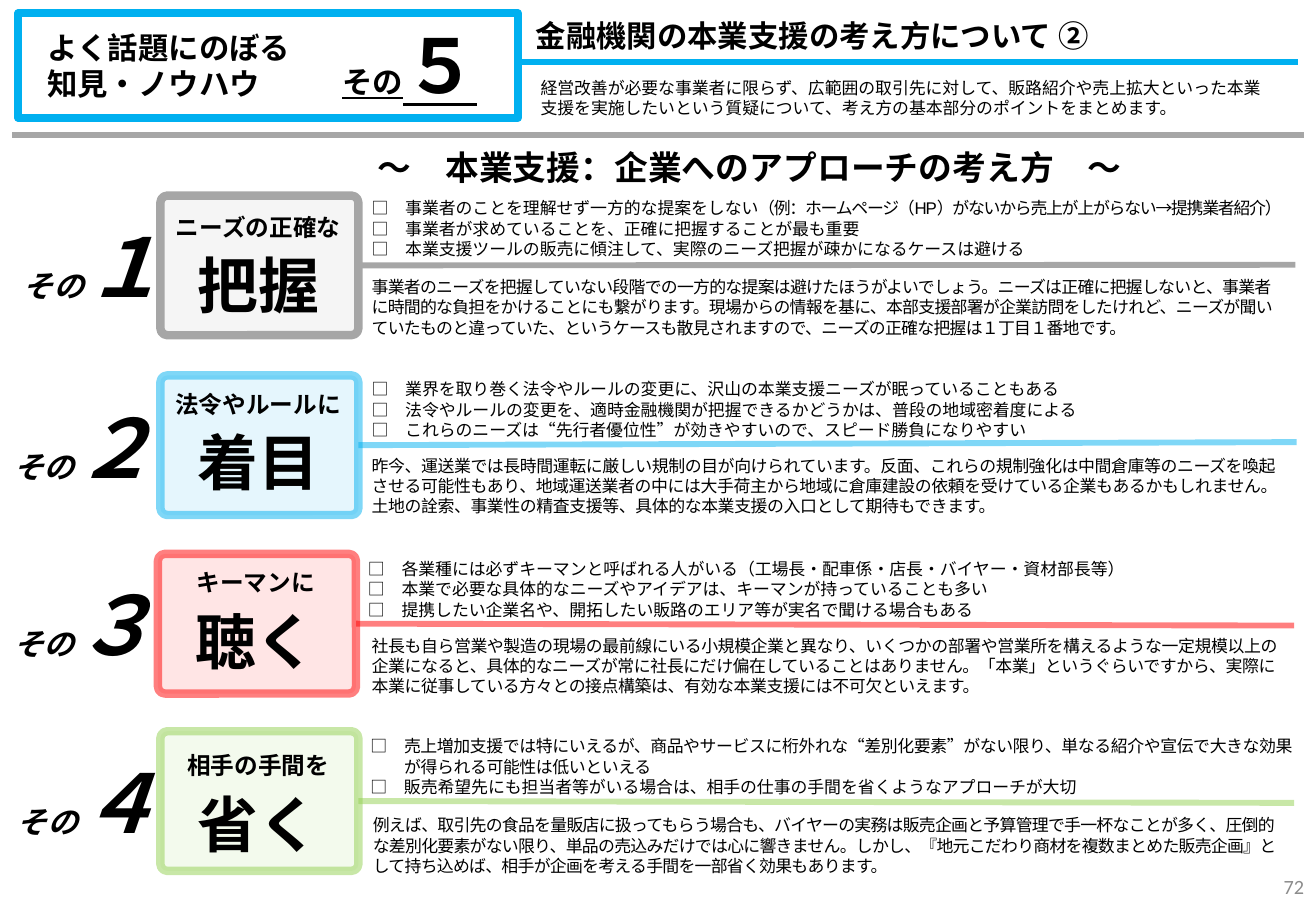
from dataclasses import dataclass

from lxml.etree import SubElement
from pptx import Presentation
from pptx.dml.color import RGBColor
from pptx.enum.shapes import MSO_CONNECTOR as Connector, MSO_SHAPE as Shape
from pptx.enum.text import MSO_ANCHOR as Anchor, PP_ALIGN as Align
from pptx.oxml.ns import qn
from pptx.util import Inches, Pt

# Content: a paragraph is a list of (text, letter spacing in points)
TITLE = "金融機関の本業支援の考え方について ②"
TOPIC = ["よく話題にのぼる", "知見・ノウハウ"]
SUMMARY = [
    "経営改善が必要な事業者に限らず、広範囲の取引先に対して、販路紹介や売上拡大といった本業",
    "支援を実施したいという質疑について、考え方の基本部分のポイントをまとめます。",
]
HEADING = "～　本業支援：企業へのアプローチの考え方　～"
PAGE_NUMBER = "72"

STEPS = [
    dict(
        number="１", lead="ニーズの正確な", word="把握", color="A6A6A6", line_alpha=100,
        points=[
            [("□　事業者のことを理解せず一方的な提案をしない", 0),
             ("（例：ホームページ（HP）がないから売上が上がらない→提携業者紹介）", -0.7)],
            [("□　事業者が求めていることを、正確に把握することが最も重要", 0)],
            [("□　本業支援ツールの販売に傾注して、実際のニーズ把握が疎かになるケースは避ける", 0)],
        ],
        body=("事業者のニーズを把握していない段階での一方的な提案は避けたほうがよいでしょう。ニーズは正確に把握しないと、事業者に時間的な負担をかけることにも繋がります。現場からの情報を基に、本部支援部署が企業訪問をしたけれど、ニーズが聞いていたものと違っていた、というケースも散見されますので、ニーズの正確な把握は１丁目１番地です。", -0.4),
        left=1.32, top=1.61, number_at=(0.09, 1.73), points_at=(2.96, 1.58),
        body_at=(2.96, 2.23), lead_top=1.7, word_top=1.99, line_end=(10.66, 2.18),
    ),
    dict(
        number="２", lead="法令やルールに", word="着目", color="00B0F0", line_alpha=50,
        points=[
            [("□　業界を取り巻く法令やルールの変更に、沢山の本業支援ニーズが眠っていることもある", 0)],
            [("□　法令やルールの変更を、適時金融機関が把握できるかどうかは、普段の地域密着度による", 0)],
            [("□　これらのニーズは“先行者優位性”が効きやすいので、スピード勝負になりやすい", 0)],
        ],
        body=("昨今、運送業では長時間運転に厳しい規制の目が向けられています。反面、これらの規制強化は中間倉庫等のニーズを喚起させる可能性もあり、地域運送業者の中には大手荷主から地域に倉庫建設の依頼を受けている企業もあるかもしれません。土地の詮索、事業性の精査支援等、具体的な本業支援の入口として期待もできます。", -0.2),
        left=1.32, top=3.09, number_at=(0.01, 3.22), points_at=(2.96, 3.07),
        body_at=(2.96, 3.7), lead_top=3.16, word_top=3.45, line_end=(10.67, 3.64),
    ),
    dict(
        number="３", lead="キーマンに", word="聴く", color="FF0000", line_alpha=50,
        points=[
            [("□　各業種には必ずキーマンと呼ばれる人がいる（工場長・配車係・店長・バイヤー・資材部長等）", 0)],
            [("□　本業で必要な具体的なニーズやアイデアは、キーマンが持っていることも多い", 0)],
            [("□　提携したい企業名や、開拓したい販路のエリア等が実名で聞ける場合もある", 0)],
        ],
        body=("社長も自ら営業や製造の現場の最前線にいる小規模企業と異なり、いくつかの部署や営業所を構えるような一定規模以上の企業になると、具体的なニーズが常に社長にだけ偏在していることはありません。「本業」というぐらいですから、実際に本業に従事している方々との接点構築は、有効な本業支援には不可欠といえます。", -0.2),
        left=1.3, top=4.56, number_at=(0.01, 4.68), points_at=(2.93, 4.55),
        body_at=(2.96, 5.18), lead_top=4.63, word_top=4.92, line_end=(10.65, 5.15),
    ),
    dict(
        number="４", lead="相手の手間を", word="省く", color="92D050", line_alpha=50,
        points=[
            [("□　", 0),
             ("売上増加支援では特にいえるが、商品やサービスに桁外れな“差別化要素”がない限り、単なる紹介や宣伝で大きな効果", -0.2)],
            [("が得られる可能性は低いといえる", -0.2)],
            [("□　販売希望先にも担当者等がいる場合は、相手の仕事の手間を省くようなアプローチが大切", 0)],
        ],
        body=("例えば、取引先の食品を量販店に扱ってもらう場合も、バイヤーの実務は販売企画と予算管理で手一杯なことが多く、圧倒的な差別化要素がない限り、単品の売込みだけでは心に響きません。しかし、『地元こだわり商材を複数まとめた販売企画』として持ち込めば、相手が企画を考える手間を一部省く効果もあります。", -0.4),
        left=1.32, top=6.02, number_at=(0.04, 6.15), points_at=(2.95, 6.01),
        body_at=(2.97, 6.66), lead_top=6.13, word_top=6.43, line_end=(10.65, 6.61),
    ),
]


@dataclass(frozen=True)
class Theme:
    font: str = "Arial"
    number_font: str = "Calibri"
    ink: str = "000000"
    muted: str = "8C8C8C"
    accent: str = "00B0F0"
    gray: str = "A6A6A6"
    small: int = 10
    footer: int = 12
    lead: int = 14
    title: int = 18
    heading: int = 20
    word: int = 36
    issue: int = 44
    number: int = 48
    rule: float = 3.5
    frame: float = 4.75
    card: float = 5


THEME = Theme()
CARD_WIDTH, CARD_HEIGHT = 1.63, 1.15

deck = Presentation()
deck.slide_width, deck.slide_height = Inches(10.83), Inches(7.5)
page = deck.slides.add_slide(deck.slide_layouts[6])


def paint(fill, color, alpha=100):
    fill.solid()
    fill.fore_color.rgb = RGBColor.from_string(color)
    if alpha < 100:
        tone = fill._xPr.find(qn("a:solidFill"))[0]
        SubElement(tone, qn("a:alpha"), val=str(alpha * 1000))


def add_text(left, top, width, height, paras, size, bold=False, italic=False,
             align=Align.LEFT, color=THEME.ink, font=THEME.font):
    box = page.shapes.add_textbox(Inches(left), Inches(top), Inches(width), Inches(height))
    frame = box.text_frame
    frame.word_wrap = True
    for index, parts in enumerate(paras):
        para = frame.paragraphs[0] if index == 0 else frame.add_paragraph()
        para.alignment = align
        para.font.size, para.font.bold, para.font.italic = Pt(size), bold, italic
        para.font.name = font
        para.font.color.rgb = RGBColor.from_string(color)
        for text, spacing in [(parts, 0)] if isinstance(parts, str) else parts:
            span = para.add_run()
            span.text = text
            if spacing:
                span._r.get_or_add_rPr().set("spc", str(round(spacing * 100)))
    return frame


def add_panel(kind, left, top, width, height, color, weight, alpha=100):
    panel = page.shapes.add_shape(kind, Inches(left), Inches(top), Inches(width), Inches(height))
    panel.shadow.inherit = False
    panel.line.width = Pt(weight)
    paint(panel.line.fill, color, alpha)
    return panel


def add_rule(start, end, color, alpha=100):
    rule = page.shapes.add_connector(Connector.STRAIGHT, *map(Inches, start + end))
    rule.line.width = Pt(THEME.rule)
    paint(rule.line.fill, color, alpha)
    SubElement(rule._element.spPr, qn("a:effectLst"))
    return rule


def add_counter(left, top, width, height, number, size, italic=False):
    frame = add_text(left, top, width, height, [[("その", 0), (number, 0)]],
                     THEME.title, bold=True, italic=italic)
    spans = frame.paragraphs[0].runs
    spans[1].font.size = Pt(size)
    return spans


# Four steps: bullet points, explanation, number, card and dividing line
for step in STEPS:
    points = add_text(*step["points_at"], 7.9, 0.61, step["points"], THEME.small)
    for para in points.paragraphs:
        if not para.text.startswith("□"):
            para._p.get_or_add_pPr().set("marL", str(Pt(2 * THEME.small)))
    add_text(*step["body_at"], 7.71, 0.61, [[step["body"]]], THEME.small)
    add_counter(*step["number_at"], 1.58, 0.91, step["number"], THEME.number, italic=True)

    left, top = step["left"], step["top"]
    card = add_panel(Shape.ROUNDED_RECTANGLE, left, top, CARD_WIDTH, CARD_HEIGHT,
                     step["color"], THEME.card, step["line_alpha"])
    card.adjustments[0] = 0.05
    paint(card.fill, step["color"], 10)
    rule = add_rule((left + CARD_WIDTH, top + CARD_HEIGHT / 2), step["line_end"],
                    step["color"], step["line_alpha"])
    rule.begin_connect(card, 3)

    center = left + CARD_WIDTH / 2 - 0.01
    for text, y, width, height, size in [
        (step["word"], step["word_top"], 2.09, 0.64, THEME.word),
        (step["lead"], step["lead_top"], 2.4, 0.31, THEME.lead),
    ]:
        add_text(center - width / 2, y, width, height, [text], size,
                 bold=True, align=Align.CENTER)

# Header
frame = add_panel(Shape.RECTANGLE, 0.15, 0.11, 4.11, 0.86, THEME.accent, THEME.frame)
frame.fill.background()
add_text(0.29, 0.19, 2.68, 0.71, TOPIC, THEME.title, bold=True)
for span in add_counter(2.72, 0.11, 1.75, 0.84, "５", THEME.issue):
    span.font.underline = True
add_rule((4.25, 0.51), (10.68, 0.51), THEME.accent)
add_text(4.31, 0.09, 6.36, 0.4, [TITLE], THEME.title, bold=True)
add_text(4.35, 0.59, 6.35, 0.44, SUMMARY, THEME.small)
add_rule((0.1, 1.11), (10.73, 1.11), THEME.gray)
add_text(3.01, 1.16, 7.51, 0.44, [HEADING], THEME.heading, bold=True)

# Page number
footer = add_text(10.3, 7.1, 0.53, 0.4, [PAGE_NUMBER], THEME.footer, align=Align.RIGHT,
                  color=THEME.muted, font=THEME.number_font)
footer.vertical_anchor = Anchor.MIDDLE

deck.save("out.pptx")
